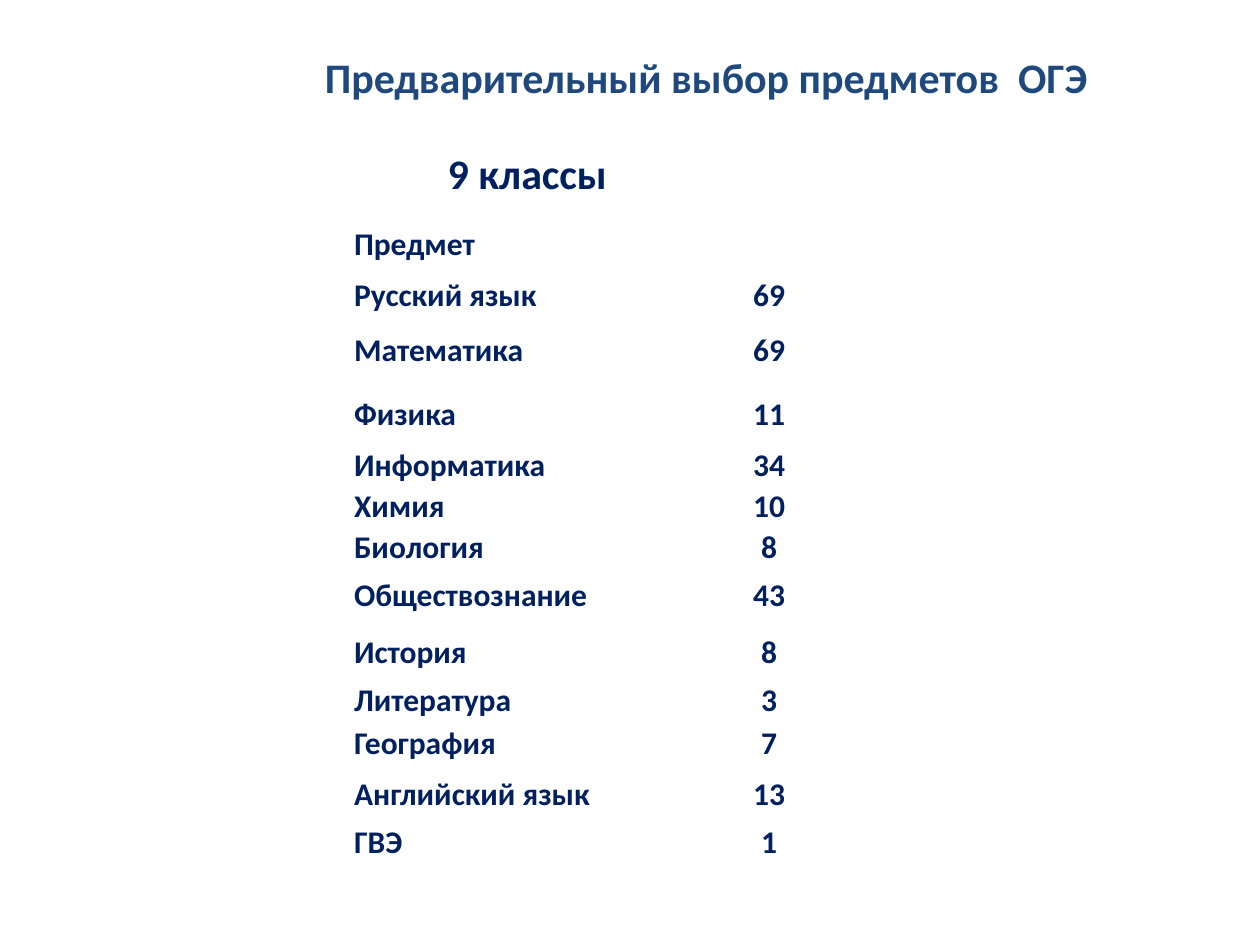
from lxml.etree import SubElement
from pptx import Presentation
from pptx.dml.color import RGBColor
from pptx.enum.text import MSO_ANCHOR, MSO_AUTO_SIZE, PP_ALIGN
from pptx.oxml.ns import qn
from pptx.util import Inches, Pt

COLORS = {"title": "1F497D", "table": "002060", "white": "FFFFFF"}
SUBJECTS = [
    ("Русский язык", 69), ("Математика", 69), ("Физика", 11),
    ("Информатика", 34), ("Химия", 10), ("Биология", 8),
    ("Обществознание", 43), ("История", 8), ("Литература", 3),
    ("География", 7), ("Английский язык", 13), ("ГВЭ", 1),
]
COLUMN_WIDTHS = [2.77, 1.07, 1.66]
ROW_HEIGHTS = [0.63, 0.48, 0.33, 0.53, 0.49, 0.33, 0.32,
               0.32, 0.45, 0.45, 0.29, 0.37, 0.45, 0.27]


def write_text(frame, text, size=18, color="table", align=PP_ALIGN.LEFT):
    paragraph = frame.paragraphs[0]
    paragraph.alignment = align
    run = paragraph.add_run()
    run.text = text
    run.font.name = "Calibri"
    run.font.size = Pt(size)
    run.font.bold = True
    run.font.color.rgb = RGBColor.from_string(COLORS[color])


def format_cell(cell):
    cell.margin_left = cell.margin_right = cell.margin_top = Inches(0.01)
    cell.margin_bottom = 0
    cell.vertical_anchor = MSO_ANCHOR.MIDDLE
    properties = cell._tc.get_or_add_tcPr()
    for side in ("a:lnL", "a:lnR", "a:lnT", "a:lnB"):
        line = SubElement(properties, qn(side), w=str(Pt(1)))
        line_fill = SubElement(line, qn("a:solidFill"))
        SubElement(line_fill, qn("a:srgbClr"), val=COLORS["white"])
    cell.fill.solid()
    cell.fill.fore_color.rgb = RGBColor.from_string(COLORS["white"])


presentation = Presentation()
presentation.slide_width = Inches(10)
presentation.slide_height = Inches(7.5)
slide = presentation.slides.add_slide(presentation.slide_layouts[6])

title = slide.shapes.add_textbox(Inches(2.48), Inches(0.36), Inches(6.32), Inches(0.5))
title.text_frame.word_wrap = False
title.text_frame.auto_size = MSO_AUTO_SIZE.SHAPE_TO_FIT_TEXT
write_text(title.text_frame, "Предварительный выбор предметов  ОГЭ", size=24, color="title")

table = slide.shapes.add_table(
    len(ROW_HEIGHTS), len(COLUMN_WIDTHS),
    Inches(2.8), Inches(1.07), Inches(sum(COLUMN_WIDTHS)), Inches(sum(ROW_HEIGHTS)),
).table
table.first_row = False
table.horz_banding = False
for column, width in zip(table.columns, COLUMN_WIDTHS):
    column.width = Inches(width)
for row, height in zip(table.rows, ROW_HEIGHTS):
    row.height = Inches(height)
for cell in table.iter_cells():
    format_cell(cell)

write_text(table.cell(0, 0).text_frame, "9 классы", size=24, align=PP_ALIGN.CENTER)
write_text(table.cell(1, 0).text_frame, "Предмет")
for row_index, (subject, count) in enumerate(SUBJECTS, start=2):
    write_text(table.cell(row_index, 0).text_frame, subject)
    write_text(table.cell(row_index, 1).text_frame, str(count), align=PP_ALIGN.CENTER)

presentation.save("out.pptx")
